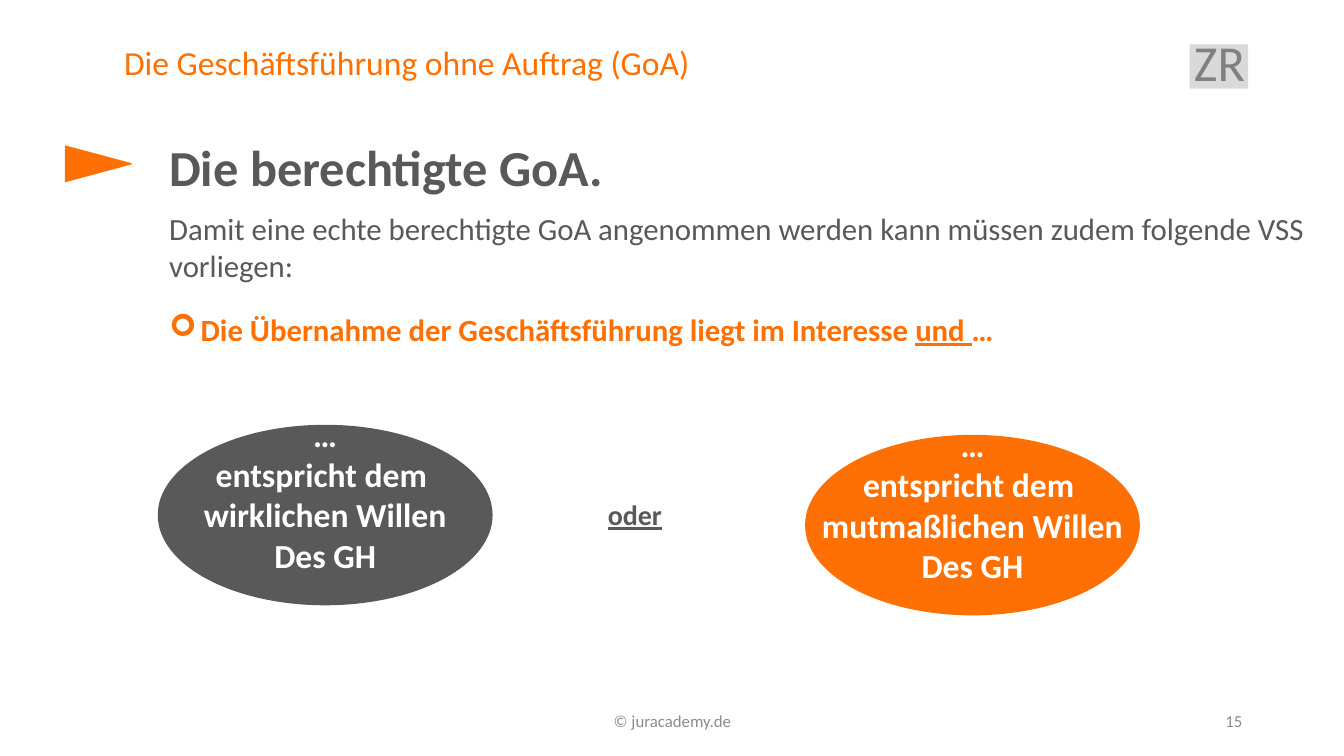
from dataclasses import dataclass, field

from lxml import etree
from pptx import Presentation
from pptx.dml.color import RGBColor
from pptx.enum import shapes, text
from pptx.oxml.ns import qn
from pptx.util import Inches, Pt

COLORS = {
    "title": "FF7001", "accent": "FE7004", "dark": "595959", "badge": "D9D9D9",
    "badge_text": "808080", "footer": "8C8C8C", "white": "FFFFFF",
}
ALIGN = text.PP_ALIGN
TOP, MIDDLE = text.MSO_ANCHOR.TOP, text.MSO_ANCHOR.MIDDLE
Box = tuple[float, float, float, float]


@dataclass
class Label:
    box: Box
    lines: list[str]
    size: int
    color: str
    align: ALIGN = ALIGN.LEFT
    anchor: text.MSO_ANCHOR = TOP
    spacing: float = 1.0
    font: dict = field(default_factory=dict)


@dataclass
class Condition:
    box: Box
    will: str
    color: str


TITLE = Label((1.13, 0.41, 9.99, 0.47), ["Die Geschäftsführung ohne Auftrag (GoA)"],
              24, "title", spacing=0.9)
SUBJECT = Label((11.66, 0.33, 0.87, 0.75), ["ZR"], 36, "badge_text", ALIGN.CENTER, spacing=0.9)
REQUIREMENT = Label((1.58, 3.03, 8.61, 0.47),
                    ["Die Übernahme der Geschäftsführung liegt im Interesse "],
                    22, "accent", font={"bold": True})
LABELS = [
    Label((4.42, 6.95, 4.5, 0.4), ["© juracademy.de"], 12, "footer", ALIGN.CENTER, MIDDLE),
    Label((9.42, 6.95, 3, 0.4), ["15"], 12, "footer", ALIGN.RIGHT, MIDDLE),
    Label((1.58, 1.3, 9.54, 1.01), ["Die berechtigte GoA."], 36, "dark", font={"bold": True}),
    Label((1.58, 2.03, 11.54, 0.84),
          ["Damit eine echte berechtigte GoA angenommen werden kann "
           "müssen zudem folgende VSS vorliegen:"], 22, "dark"),
    Label((5.93, 4.89, 0.83, 0.44), ["oder"], 20, "dark",
          font={"bold": True, "underline": True}),
]
CONDITIONS = [
    Condition((1.58, 4.23, 3.29, 1.76), "wirklichen Willen", "dark"),
    Condition((8, 4.33, 3.29, 1.76), "mutmaßlichen Willen", "accent"),
]


def rgb(name: str) -> RGBColor:
    return RGBColor.from_string(COLORS[name])


def set_all(target, values: dict) -> None:
    for name, value in values.items():
        setattr(target, name, value)


def add_run(p, words: str, label: Label, **extra) -> None:
    r = p.add_run()
    r.text = words
    set_all(r.font, {"name": "Calibri", "size": Pt(label.size), **label.font, **extra})
    r.font.color.rgb = rgb(label.color)


def write(sp, label: Label) -> None:
    """Fill a shape, text box or placeholder with the label's lines."""
    tf = sp.text_frame
    set_all(tf, {"word_wrap": True, "auto_size": text.MSO_AUTO_SIZE.NONE,
                 "vertical_anchor": label.anchor})
    for i, line in enumerate(label.lines):
        p = tf.add_paragraph() if i else tf.paragraphs[0]
        set_all(p, {"alignment": label.align, "line_spacing": label.spacing,
                    "space_before": Pt(0)})
        add_run(p, line, label)


def fill_placeholder(sp, label: Label) -> None:
    set_all(sp, dict(zip(("left", "top", "width", "height"), map(Inches, label.box))))
    write(sp, label)


def set_bullet(p, char: str | None, indent: float = 0) -> None:
    pPr = p._p.get_or_add_pPr()
    pPr.set("marL", str(Inches(indent)))
    pPr.set("indent", str(-Inches(indent)))
    if char:
        etree.SubElement(pPr, qn("a:buFont")).set("typeface", "Wingdings")
        etree.SubElement(pPr, qn("a:buChar")).set("char", char)
    else:
        etree.SubElement(pPr, qn("a:buNone"))


def add_shape(s, kind: shapes.MSO_SHAPE, box: Box, color: str, line: float = 0):
    sp = s.shapes.add_shape(kind, *map(Inches, box))
    sp.shadow.inherit = False
    sp.fill.solid()
    sp.fill.fore_color.rgb = rgb(color)
    if line:
        sp.line.color.rgb = rgb(color)
        sp.line.width = Pt(line)
    else:
        sp.line.fill.background()
    return sp


def add_condition(s, condition: Condition) -> None:
    sp = add_shape(s, shapes.MSO_SHAPE.OVAL, condition.box, condition.color, 2.25)
    lines = ["…", "entspricht dem ", condition.will, "Des GH"]
    write(sp, Label(condition.box, lines, 24, "white", ALIGN.CENTER, MIDDLE,
                    font={"bold": True}))
    # The larger bottom margin lifts the text above the middle
    set_all(sp.text_frame, {"word_wrap": False, "margin_top": 0, "margin_bottom": Inches(0.41)})


def main() -> None:
    prs = Presentation()
    prs.slide_width, prs.slide_height = Inches(13.33), Inches(7.5)
    s = prs.slides.add_slide(prs.slide_layouts.get_by_name("Two Content"))
    subject, requirement = s.placeholders[1], s.placeholders[2]

    badge = add_shape(s, shapes.MSO_SHAPE.RECTANGLE, (11.8, 0.44, 0.58, 0.44), "badge")
    s.shapes._spTree.insert(2, badge._element)

    fill_placeholder(s.shapes.title, TITLE)
    fill_placeholder(subject, SUBJECT)
    set_bullet(subject.text_frame.paragraphs[0], None)

    fill_placeholder(requirement, REQUIREMENT)
    p = requirement.text_frame.paragraphs[0]
    set_bullet(p, "➢", 0.31)
    add_run(p, "und ", REQUIREMENT, underline=True)
    add_run(p, "…", REQUIREMENT)

    marker = add_shape(s, shapes.MSO_SHAPE.ISOSCELES_TRIANGLE, (0.8, 1.3, 0.35, 0.65),
                       "accent", 1)
    marker.rotation = 90
    for label in LABELS:
        write(s.shapes.add_textbox(*map(Inches, label.box)), label)
    for condition in CONDITIONS:
        add_condition(s, condition)

    prs.save("out.pptx")


if __name__ == "__main__":
    main()
